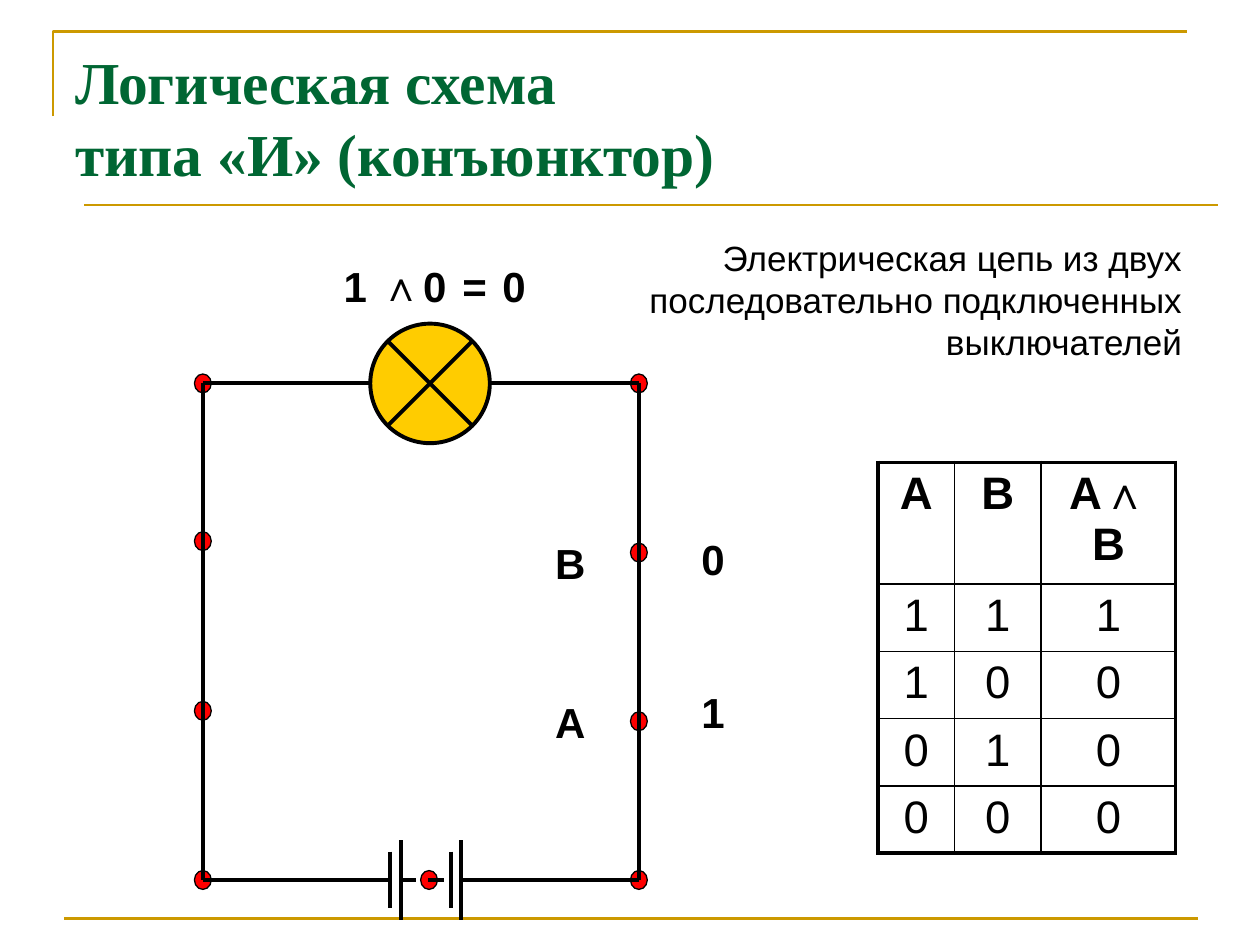
from lxml import etree
from pptx import Presentation
from pptx.dml.color import RGBColor
from pptx.enum.dml import MSO_LINE
from pptx.enum.shapes import MSO_CONNECTOR, MSO_SHAPE
from pptx.enum.text import MSO_ANCHOR, PP_ALIGN
from pptx.oxml.ns import qn
from pptx.util import Cm, Pt

STRAIGHT = MSO_CONNECTOR.STRAIGHT
OVAL = MSO_SHAPE.OVAL
LAMP = MSO_SHAPE.FLOWCHART_SUMMING_JUNCTION
DASH = MSO_LINE.DASH
LEFT, CENTER, RIGHT = PP_ALIGN.LEFT, PP_ALIGN.CENTER, PP_ALIGN.RIGHT
TOP, MIDDLE = MSO_ANCHOR.TOP, MSO_ANCHOR.MIDDLE

COLORS = {
    "ink": "000000",
    "title": "006633",
    "frame": "CC9900",
    "node": "FF0000",
    "lamp": "FFCC00",
}

WIRE_LEFT, WIRE_RIGHT = 4.09, 12.88
WIRE_TOP, WIRE_BOTTOM = 7.73, 17.74
LAMP_X, LAMP_SIZE = 8.67, 2.41
NODES = (
    [(WIRE_LEFT, y) for y in (WIRE_TOP, 10.91, 14.33, WIRE_BOTTOM)]
    + [(WIRE_RIGHT, y) for y in (WIRE_TOP, 11.14, 14.54, WIRE_BOTTOM)]
    + [(8.65, y) for y in (WIRE_TOP, WIRE_BOTTOM)]
)
BATTERY_PLATES = [(7.87, 0.57), (8.08, 0.8), (9.09, 0.57), (9.3, 0.8)]
LABELS = [
    ("1", 6.68, 5.13, 0.81),
    ("∧", 7.42, 5.11, 1.19),
    ("0", 8.28, 5.13, 0.81),
    ("=", 9.07, 5.13, 0.81),
    ("0", 9.88, 5.13, 0.81),
    ("1", 13.89, 13.72, 0.81),
    ("0", 13.89, 10.64, 0.81),
    ("A", 10.9, 13.92, 1.19),
    ("В", 10.9, 10.72, 1.19),
]
TRUTH_TABLE = [
    ("A", "B", "A∧\vB"),
    ("1", "1", "1"),
    ("1", "0", "0"),
    ("0", "1", "0"),
    ("0", "0", "0"),
]
COLUMN_WIDTHS = (1.54, 1.75, 2.71)
HEADER_HEIGHT, ROW_HEIGHT = 2.45, 1.35


def rgb(name):
    return RGBColor.from_string(COLORS[name])


def write_text(frame, text, size=24, font="Arial", color="ink", bold=False,
               align=CENTER):
    paragraph = frame.paragraphs[0]
    paragraph.text = text
    paragraph.alignment = align
    for run in paragraph.runs:
        run.font.size = Pt(size)
        run.font.name = font
        run.font.bold = bold
        run.font.color.rgb = rgb(color)


def add_label(slide, text, x, y, width, height=1.27, anchor=TOP, **text_format):
    frame = slide.shapes.add_textbox(Cm(x), Cm(y), Cm(width), Cm(height)).text_frame
    frame.word_wrap = True
    frame.vertical_anchor = anchor
    write_text(frame, text, **text_format)


def add_line(slide, x1, y1, x2, y2, color="ink", weight=2.25, dash=None):
    line = slide.shapes.add_connector(STRAIGHT, Cm(x1), Cm(y1), Cm(x2), Cm(y2))
    line.line.color.rgb = rgb(color)
    line.line.width = Pt(weight)
    if dash:
        line.line.dash_style = dash
    etree.SubElement(line._element.spPr, qn("a:effectLst"))


def add_part(slide, kind, center_x, center_y, width, height, fill, weight):
    part = slide.shapes.add_shape(kind, Cm(center_x - width / 2),
                                  Cm(center_y - height / 2), Cm(width), Cm(height))
    part.shadow.inherit = False
    part.fill.solid()
    part.fill.fore_color.rgb = rgb(fill)
    part.line.color.rgb = rgb("ink")
    part.line.width = Pt(weight)


def add_frame(slide):
    builder = slide.shapes.build_freeform(Cm(1.07), Cm(2.34))
    builder.add_line_segments([(Cm(1.07), Cm(0.63)), (Cm(23.93), Cm(0.63))],
                              close=False)
    corner = builder.convert_to_shape()
    corner.shadow.inherit = False
    corner.fill.background()
    corner.line.color.rgb = rgb("frame")
    corner.line.width = Pt(1.5)
    for x, y in ((1.3, 18.52), (1.7, 4.13)):
        add_line(slide, x, y, x + 22.86, y, color="frame", weight=1.5)


def add_circuit(slide):
    for x, y in NODES:
        add_part(slide, OVAL, x, y, 0.34, 0.38, "node", 0.75)
    add_part(slide, LAMP, LAMP_X, WIRE_TOP, LAMP_SIZE, LAMP_SIZE, "lamp", 2.25)

    plate_xs = [x for x, _ in BATTERY_PLATES]
    lamp_edges = (LAMP_X - LAMP_SIZE / 2, LAMP_X + LAMP_SIZE / 2)
    battery_edges = (plate_xs[0], plate_xs[-1])
    for side, lamp_x, battery_x in zip((WIRE_LEFT, WIRE_RIGHT), lamp_edges,
                                       battery_edges):
        add_line(slide, lamp_x, WIRE_TOP, side, WIRE_TOP)
        add_line(slide, side, WIRE_TOP, side, WIRE_BOTTOM)
        add_line(slide, battery_x, WIRE_BOTTOM, side, WIRE_BOTTOM)

    for x, reach in BATTERY_PLATES:
        add_line(slide, x, WIRE_BOTTOM - reach, x, WIRE_BOTTOM + reach)
    add_line(slide, plate_xs[1], WIRE_BOTTOM, plate_xs[2], WIRE_BOTTOM, dash=DASH)


def set_borders(cell, weights):
    properties = cell._tc.get_or_add_tcPr()
    for side, weight in zip("LRTB", weights):
        border = etree.SubElement(properties, qn(f"a:ln{side}"), w=str(Pt(weight)))
        fill = etree.SubElement(border, qn("a:solidFill"))
        etree.SubElement(fill, qn("a:srgbClr"), val=COLORS["ink"])


def add_truth_table(slide):
    row_count, column_count = len(TRUTH_TABLE), len(COLUMN_WIDTHS)
    height = HEADER_HEIGHT + ROW_HEIGHT * (row_count - 1)
    table = slide.shapes.add_table(row_count, column_count, Cm(17.7), Cm(9.32),
                                   Cm(sum(COLUMN_WIDTHS)), Cm(height)).table
    table.first_row = False
    table.horz_banding = False
    for column, width in zip(table.columns, COLUMN_WIDTHS):
        column.width = Cm(width)
    for r, values in enumerate(TRUTH_TABLE):
        table.rows[r].height = Cm(ROW_HEIGHT if r else HEADER_HEIGHT)
        for c, value in enumerate(values):
            cell = table.cell(r, c)
            write_text(cell.text_frame, value, size=26, bold=r == 0)
            outer = (c == 0, c == column_count - 1, r == 0, r == row_count - 1)
            set_borders(cell, [2.25 if edge else 1 for edge in outer])
            cell.fill.background()


def main():
    deck = Presentation()
    deck.slide_width, deck.slide_height = Cm(25.4), Cm(19.05)
    slide = deck.slides.add_slide(deck.slide_layouts[6])

    add_frame(slide)
    add_label(slide, "Логическая схема\vтипа «И» (конъюнктор)", 1.27, 0.76, 22.86,
              3.18, anchor=MIDDLE, size=34, font="Times New Roman", color="title",
              bold=True, align=LEFT)
    add_circuit(slide)
    for text, x, y, width in LABELS:
        add_label(slide, text, x, y, width, bold=True)
    add_truth_table(slide)
    add_label(slide,
              "Электрическая цепь из двух\vпоследовательно подключенных\vвыключателей",
              12.57, 4.65, 11.51, 2.79, size=20, align=RIGHT)

    deck.save("out.pptx")


if __name__ == "__main__":
    main()
